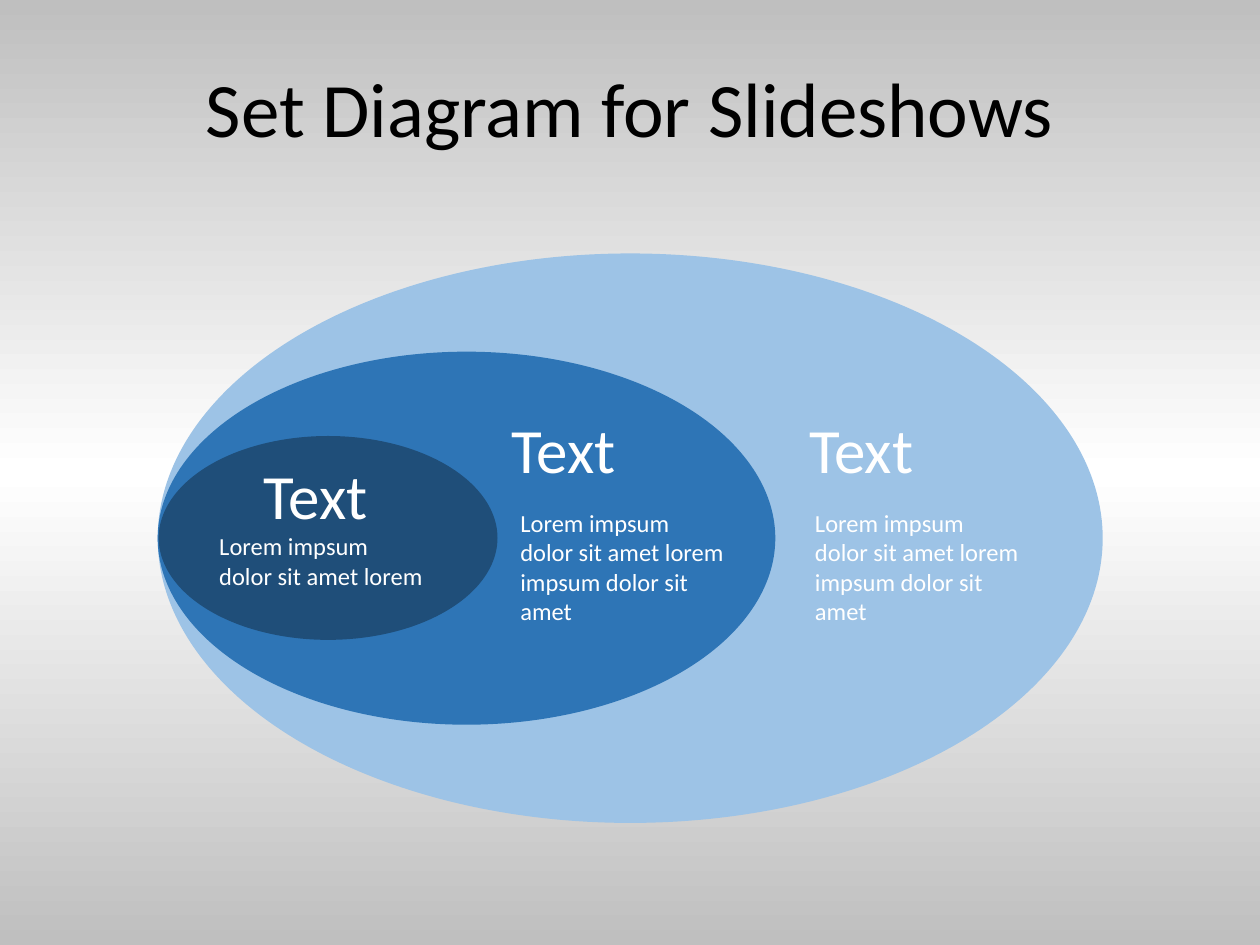
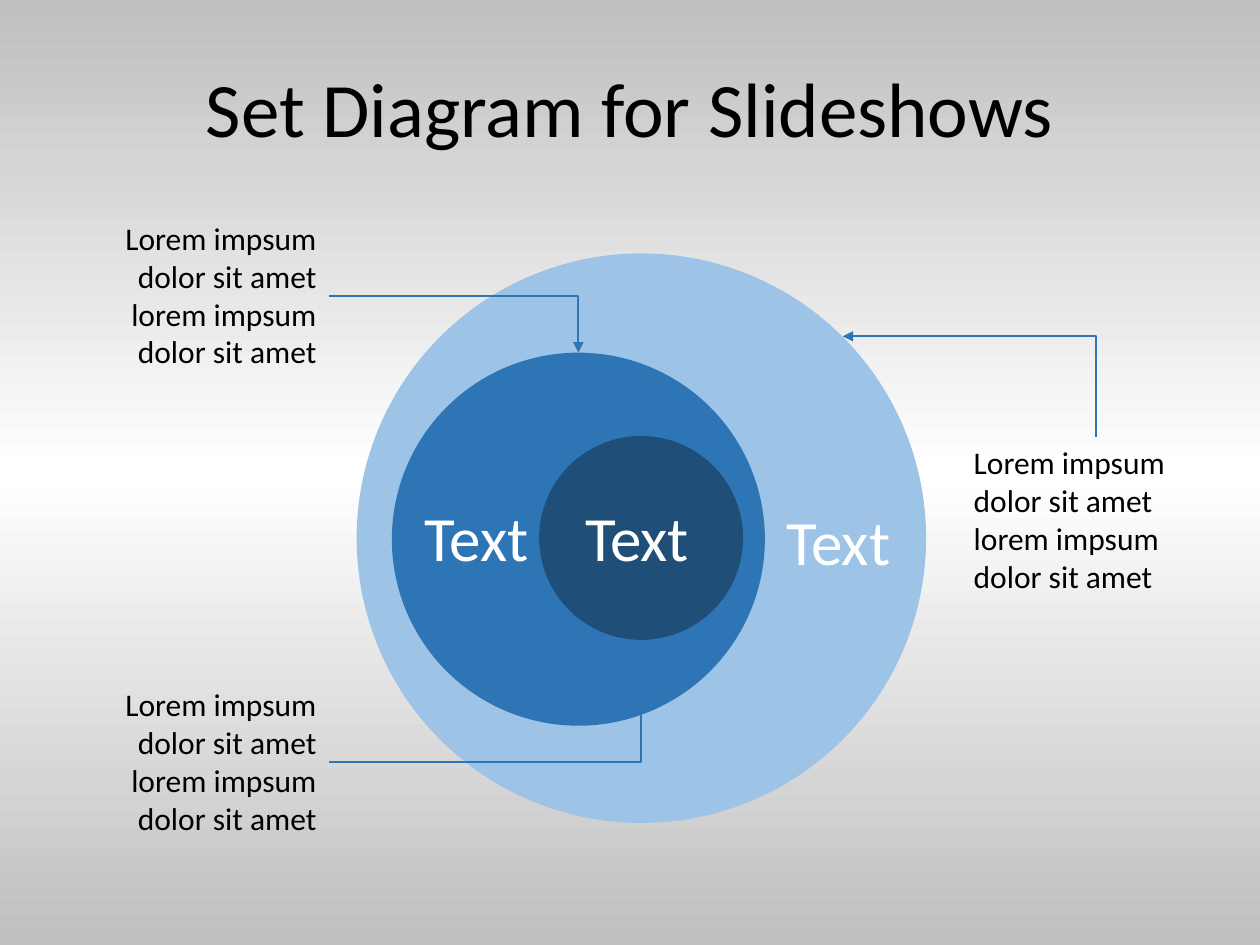
"""Build two set diagram slides: nested ellipses and nested circles with notes."""
from copy import deepcopy

from pptx import Presentation
from pptx.dml.color import RGBColor
from pptx.enum.shapes import MSO_CONNECTOR, MSO_SHAPE
from pptx.enum.text import MSO_ANCHOR, MSO_AUTO_SIZE, PP_ALIGN
from pptx.oxml.ns import qn
from pptx.util import Cm, Pt

ELBOW = MSO_CONNECTOR.ELBOW
OVAL = MSO_SHAPE.OVAL
MIDDLE = MSO_ANCHOR.MIDDLE
GROW = MSO_AUTO_SIZE.SHAPE_TO_FIT_TEXT
LEFT, CENTER, RIGHT = PP_ALIGN.LEFT, PP_ALIGN.CENTER, PP_ALIGN.RIGHT

COLORS = {
    "edge": "BFBFBF",
    "white": "FFFFFF",
    "black": "000000",
    "outer": "9DC3E6",
    "middle": "2E75B6",
    "inner": "1F4E79",
}
FONT = "Calibri"
TITLE = "Set Diagram for Slideshows"
LABEL = "Text"
SHORT_LOREM = "Lorem impsum dolor sit amet lorem"
LOREM = "Lorem impsum dolor sit amet lorem impsum dolor sit amet"


def rgb(name):
    return RGBColor.from_string(COLORS[name])


def add_text(slide, box, text, size, color, align):
    frame = slide.shapes.add_textbox(*map(Cm, box)).text_frame
    frame.word_wrap = True
    frame.auto_size = GROW
    frame.text = text
    paragraph = frame.paragraphs[0]
    paragraph.alignment = align
    font = paragraph.runs[0].font
    font.name = FONT
    font.size = Pt(size)
    font.color.rgb = rgb(color)
    return frame


ellipses = {
    "sets": {
        "outer": (3.18, 5.11, 19.05, 11.48),
        "middle": (3.18, 7.09, 12.45, 7.52),
        "inner": (3.2, 8.79, 6.83, 4.11),
    },
    "labels": [(9.65, 8.15, 3.43), (4.65, 9.07, 3.43), (15.88, 8.15, 2.97)],
    "texts": [
        (10.24, 10.11, 4.62, 2.64, LOREM, 14, "white", LEFT),
        (16.18, 10.11, 4.62, 2.64, LOREM, 14, "white", LEFT),
        (4.17, 10.59, 4.62, 1.45, SHORT_LOREM, 14, "white", LEFT),
    ],
    "arrows": [],
}
circles = {
    "sets": {
        "outer": (7.19, 5.11, 11.48, 11.48),
        "middle": (7.9, 7.11, 7.52, 7.52),
        "inner": (10.87, 8.79, 4.11, 4.11),
    },
    "labels": [(11.13, 9.93, 3.43), (7.9, 9.93, 3.43), (15.42, 10.01, 2.97)],
    "texts": [
        (1.19, 4.29, 5.44, 3.33, LOREM, 18, "black", RIGHT),
        (1.19, 13.69, 5.44, 3.33, LOREM, 18, "black", RIGHT),
        (19.38, 8.81, 5.44, 3.33, LOREM, 18, "black", LEFT),
    ],
    "arrows": [
        (6.63, 5.97, 11.66, 7.11, "a:tailEnd"),
        (6.63, 15.37, 12.93, 12.93, "a:tailEnd"),
        (16.99, 6.78, 22.1, 8.81, "a:headEnd"),
    ],
}

prs = Presentation()
prs.slide_width, prs.slide_height = Cm(25.4), Cm(19.05)

for diagram in (ellipses, circles):
    slide = prs.slides.add_slide(prs.slide_layouts[6])

    backdrop = slide.background.fill
    backdrop.gradient()
    backdrop.gradient_angle = 270
    stop_list = next(slide.element.iter(qn("a:gsLst")))
    stop_list.insert(1, deepcopy(stop_list[0]))
    for stop, position, color in zip(
        backdrop.gradient_stops, (0, 0.5, 1), ("edge", "white", "edge")
    ):
        stop.position = position
        stop.color.rgb = rgb(color)

    for level, box in diagram["sets"].items():
        region = slide.shapes.add_shape(OVAL, *map(Cm, box))
        region.shadow.inherit = False
        region.fill.solid()
        region.fill.fore_color.rgb = rgb(level)
        region.line.fill.background()

    title = add_text(slide, (1.75, 1.02, 21.9, 2.51), TITLE, 44, "black", CENTER)
    title.auto_size = MSO_AUTO_SIZE.NONE
    title.vertical_anchor = MIDDLE
    title.paragraphs[0].line_spacing = 0.9

    for label_box in diagram["labels"]:
        add_text(slide, (*label_box, 1.8), LABEL, 36, "white", CENTER)

    for left, top, width, height, *content in diagram["texts"]:
        add_text(slide, (left, top, width, height), *content)

    for *ends, arrow_end in diagram["arrows"]:
        arrow = slide.shapes.add_connector(ELBOW, *map(Cm, ends))
        arrow.line.color.rgb = rgb("middle")
        arrow.line.width = Pt(1)
        properties = arrow.element.spPr
        properties.find(qn("a:prstGeom")).set("prst", "bentConnector2")
        head = properties.find(qn("a:ln")).makeelement(qn(arrow_end), {"type": "triangle"})
        properties.find(qn("a:ln")).append(head)
        properties.append(properties.makeelement(qn("a:effectLst"), {}))

prs.save("out.pptx")
